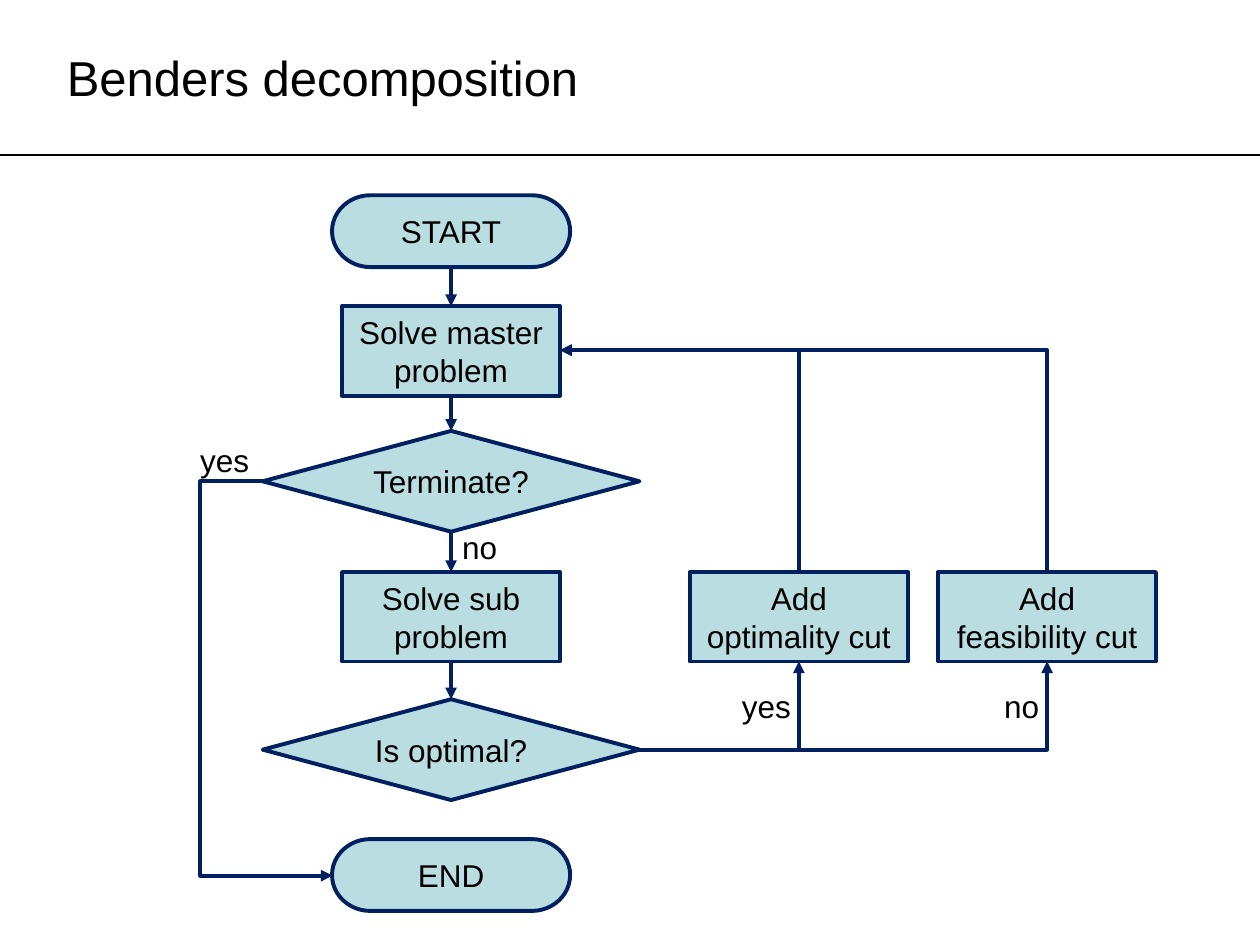
"""Build the Benders decomposition flowchart slide."""
from pptx import Presentation
from pptx.dml.color import RGBColor
from pptx.enum.shapes import MSO_CONNECTOR, MSO_SHAPE
from pptx.enum.text import MSO_ANCHOR, MSO_AUTO_SIZE, PP_ALIGN
from pptx.oxml.ns import qn
from pptx.util import Inches, Pt
from lxml.etree import SubElement

COLORS = {"fill": "BADDE1", "line": "002060", "text": "000000"}
SIZES = {
    MSO_SHAPE.FLOWCHART_TERMINATOR: (1.89, 0.57),
    MSO_SHAPE.FLOWCHART_PROCESS: (1.73, 0.71),
    MSO_SHAPE.FLOWCHART_DECISION: (2.99, 0.8),
}
MAIN_X, OPTIMALITY_X, FEASIBILITY_X = 3.58, 6.34, 8.31
MASTER_Y, TERMINATE_Y, CUT_Y, OPTIMAL_Y, END_Y = 2.78, 3.82, 4.54, 5.95, 6.95
CUT_BOTTOM = 5.25


def write(frame, text, size, align):
    frame.text = text
    paragraph = frame.paragraphs[0]
    paragraph.alignment = align
    font = paragraph.runs[0].font
    font.name, font.size = "Arial", Pt(size)
    font.color.rgb = RGBColor.from_string(COLORS["text"])


def connect(kind, start, end, color="line", width=2.25, arrow=True):
    ends = [Inches(value) for value in (*start, *end)]
    connector = slide.shapes.add_connector(kind, *ends)
    connector.line.color.rgb = RGBColor.from_string(COLORS[color])
    connector.line.width = Pt(width)
    properties = connector._element.spPr
    if arrow:
        SubElement(properties.find(qn("a:ln")), qn("a:tailEnd"), type="triangle")
    SubElement(properties, qn("a:effectLst"))
    return connector


prs = Presentation()
prs.slide_width, prs.slide_height = Inches(10), Inches(7.5)
slide = prs.slides.add_slide(prs.slide_layouts[5])

connect(MSO_CONNECTOR.STRAIGHT, (0, 1.23), (10, 1.23), "text", 0.75, False)
title = slide.shapes.title
title.left, title.top = Inches(0.43), Inches(0.07)
title.width, title.height = Inches(9.14), Inches(1.08)
title.text_frame.vertical_anchor = MSO_ANCHOR.MIDDLE
write(title.text_frame, "Benders decomposition", 28, PP_ALIGN.LEFT)

steps = {}
for text, kind, center_x, top in [
    ("START", MSO_SHAPE.FLOWCHART_TERMINATOR, MAIN_X, 1.55),
    ("Solve master problem", MSO_SHAPE.FLOWCHART_PROCESS, MAIN_X, 2.43),
    ("Terminate?", MSO_SHAPE.FLOWCHART_DECISION, MAIN_X, 3.42),
    ("Solve sub problem", MSO_SHAPE.FLOWCHART_PROCESS, MAIN_X, CUT_Y),
    ("Is optimal?", MSO_SHAPE.FLOWCHART_DECISION, MAIN_X, 5.55),
    ("END", MSO_SHAPE.FLOWCHART_TERMINATOR, MAIN_X, 6.66),
    ("Add optimality cut", MSO_SHAPE.FLOWCHART_PROCESS, OPTIMALITY_X, CUT_Y),
    ("Add feasibility cut", MSO_SHAPE.FLOWCHART_PROCESS, FEASIBILITY_X, CUT_Y),
]:
    width, height = SIZES[kind]
    step = slide.shapes.add_shape(
        kind, Inches(center_x - width / 2), Inches(top), Inches(width), Inches(height)
    )
    step.shadow.inherit = False
    step.fill.solid()
    step.fill.fore_color.rgb = RGBColor.from_string(COLORS["fill"])
    step.line.color.rgb = RGBColor.from_string(COLORS["line"])
    step.line.width = Pt(2.25)
    step.text_frame.word_wrap = True
    write(step.text_frame, text, 18, PP_ALIGN.CENTER)
    steps[text] = step

main_flow = list(steps.values())[:5]
for upper, lower in zip(main_flow, main_flow[1:]):
    down_arrow = connect(MSO_CONNECTOR.STRAIGHT, (MAIN_X, 2), (MAIN_X, 3))
    down_arrow.begin_connect(upper, 2)
    down_arrow.end_connect(lower, 0)

decision_right = MAIN_X + SIZES[MSO_SHAPE.FLOWCHART_DECISION][0] / 2
master_right = MAIN_X + SIZES[MSO_SHAPE.FLOWCHART_PROCESS][0] / 2
for cut_x in (OPTIMALITY_X, FEASIBILITY_X):
    to_cut = connect(
        MSO_CONNECTOR.ELBOW, (decision_right, OPTIMAL_Y), (cut_x, CUT_BOTTOM)
    )
    middle_x, middle_y = (cut_x + master_right) / 2, (CUT_Y + MASTER_Y) / 2
    half_rise, half_run = (CUT_Y - MASTER_Y) / 2, (cut_x - master_right) / 2
    to_master = connect(
        MSO_CONNECTOR.ELBOW,
        (middle_x - half_rise, middle_y + half_run),
        (middle_x + half_rise, middle_y - half_run),
    )
    to_master._element.spPr.find(qn("a:xfrm")).set("rot", str(270 * 60000))
    for bend in (to_cut, to_master):
        bend._element.spPr.find(qn("a:prstGeom")).set("prst", "bentConnector2")

to_end = connect(MSO_CONNECTOR.ELBOW, (2.09, TERMINATE_Y), (2.64, END_Y))
geometry = to_end._element.spPr.find(qn("a:prstGeom"))
adjustments = geometry.find(qn("a:avLst"))
if adjustments is None:
    adjustments = SubElement(geometry, qn("a:avLst"))
SubElement(adjustments, qn("a:gd"), name="adj1", fmla="val -91000")

for answer, left, top, width in [
    ("yes", 5.79, 5.4, 0.59),
    ("no", 7.87, 5.4, 0.48),
    ("yes", 1.49, 3.45, 0.59),
    ("no", 3.57, 4.14, 0.48),
]:
    label = slide.shapes.add_textbox(
        Inches(left), Inches(top), Inches(width), Inches(0.4)
    )
    label.text_frame.word_wrap = False
    label.text_frame.auto_size = MSO_AUTO_SIZE.SHAPE_TO_FIT_TEXT
    write(label.text_frame, answer, 18, PP_ALIGN.LEFT)

prs.save("out.pptx")
